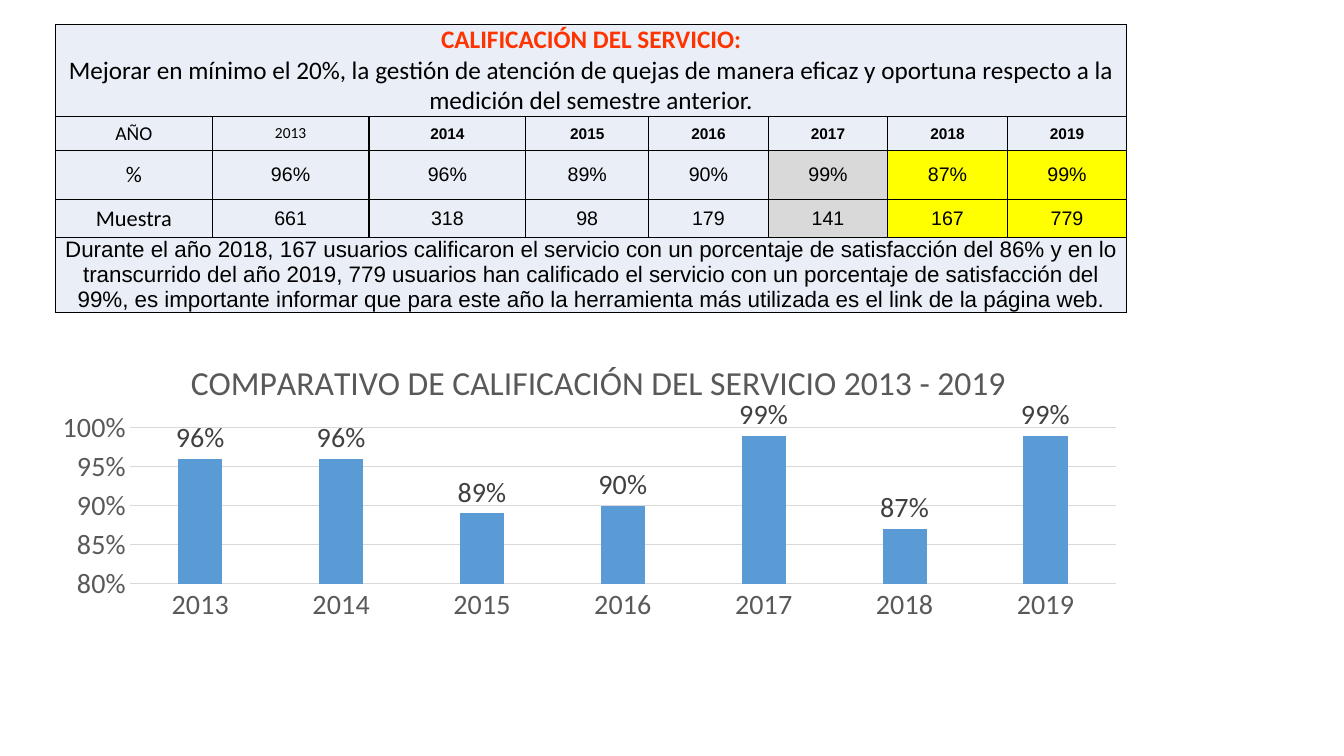
from dataclasses import dataclass

from lxml import etree
from pptx import Presentation
from pptx import util as u
from pptx.chart.data import CategoryChartData
from pptx.dml.color import RGBColor
from pptx.enum import chart as ch, text
from pptx.oxml import parse_xml
from pptx.oxml.ns import nsdecls, qn

BLACK = RGBColor(0x00, 0x00, 0x00)
RED = RGBColor(0xFF, 0x33, 0x00)
PALE_BLUE = RGBColor(0xEA, 0xEF, 0xF7)
GREY = RGBColor(0xD9, 0xD9, 0xD9)
YELLOW = RGBColor(0xFF, 0xFF, 0x00)
BAR_BLUE = RGBColor(0x5B, 0x9B, 0xD5)
AXIS_GREY = RGBColor(0x59, 0x59, 0x59)
LABEL_GREY = RGBColor(0x40, 0x40, 0x40)


@dataclass(frozen=True)
class Style:
    size: float
    name: str = "Calibri"
    bold: bool = False
    color: RGBColor = BLACK


@dataclass(frozen=True)
class Measure:
    heading: str
    values: list[str]
    heading_style: Style
    value_style: Style
    highlighted: bool = True


YEARS = ["2013", "2014", "2015", "2016", "2017", "2018", "2019"]
SCORES = [0.96, 0.96, 0.89, 0.90, 0.99, 0.87, 0.99]
SAMPLES = ["661", "318", "98", "179", "141", "167", "779"]
HIGHLIGHTS = {"2017": GREY, "2018": YELLOW, "2019": YELLOW}
FIRST_YEAR_STYLE = Style(11)

MEASURES = [
    Measure("AÑO", YEARS, Style(14), Style(11, "Arial", True), highlighted=False),
    Measure("%", [f"{score:.0%}" for score in SCORES], Style(16), Style(14, "Arial")),
    Measure("Muestra", SAMPLES, Style(16), Style(14, "Arial")),
]
GOAL = [
    ("CALIFICACIÓN DEL SERVICIO:", Style(18, bold=True, color=RED)),
    ("Mejorar en mínimo el 20%, la gestión de atención de quejas de manera eficaz "
     "y oportuna respecto a la medición del semestre anterior.", Style(18)),
]
SUMMARY = [
    ("Durante el año 2018, 167 usuarios calificaron el servicio con un porcentaje de "
     "satisfacción del 86% y en lo transcurrido del año 2019, 779 usuarios han "
     "calificado el servicio con un porcentaje de satisfacción del 99%, es importante "
     "informar que para este año la herramienta más utilizada es el link de la "
     "página web.", Style(16, "Arial")),
]
COLUMN_WIDTHS = [112, 112, 112, 87.8] + [85.4] * 4
ROW_HEIGHTS = [65.7, 24.5, 34.5, 27.5, 53.5]


def set_font(font, style: Style) -> None:
    font.size = u.Pt(style.size)
    font.name = style.name
    font.bold = style.bold
    font.color.rgb = style.color


def format_cell(cell, fill: RGBColor) -> None:
    """Give a cell its borders, fill and tight margins."""
    properties = cell._tc.get_or_add_tcPr()
    for side in ("lnL", "lnR", "lnT", "lnB"):
        properties.append(parse_xml(
            f'<a:{side} {nsdecls("a")} w="{u.Pt(1)}"><a:solidFill>'
            f'<a:srgbClr val="{BLACK}"/></a:solidFill></a:{side}>'))
    cell.fill.solid()
    cell.fill.fore_color.rgb = fill
    cell.margin_left = cell.margin_right = cell.margin_top = cell.margin_bottom = u.Pt(0)
    cell.vertical_anchor = text.MSO_ANCHOR.MIDDLE


def write_cell(cell, lines: list[tuple[str, Style]]) -> None:
    frame = cell.text_frame
    for index, (line, style) in enumerate(lines):
        paragraph = frame.add_paragraph() if index else frame.paragraphs[0]
        paragraph.text = line
        paragraph.alignment = text.PP_ALIGN.CENTER
        set_font(paragraph.font, style)


def add_ratings_table(slide) -> None:
    table = slide.shapes.add_table(
        len(ROW_HEIGHTS), len(COLUMN_WIDTHS), u.Pt(39.6), u.Pt(17.3),
        u.Pt(sum(COLUMN_WIDTHS)), u.Pt(sum(ROW_HEIGHTS))).table
    table.first_row = table.horz_banding = False
    for column, width in zip(table.columns, COLUMN_WIDTHS):
        column.width = u.Pt(width)
    for row, height in zip(table.rows, ROW_HEIGHTS):
        row.height = u.Pt(height)
    for cell in table.iter_cells():
        format_cell(cell, PALE_BLUE)

    # Full-width goal and summary
    last_row, last_column = len(ROW_HEIGHTS) - 1, len(COLUMN_WIDTHS) - 1
    for row, lines in ((0, GOAL), (last_row, SUMMARY)):
        table.cell(row, 0).merge(table.cell(row, last_column))
        write_cell(table.cell(row, 0), lines)

    # Yearly measures
    for row, measure in enumerate(MEASURES, start=1):
        write_cell(table.cell(row, 0), [(measure.heading, measure.heading_style)])
        for column, (year, value) in enumerate(zip(YEARS, measure.values), start=1):
            cell = table.cell(row, column)
            first_year = row == 1 and column == 1
            write_cell(cell, [(value, FIRST_YEAR_STYLE if first_year else measure.value_style)])
            if measure.highlighted and year in HIGHLIGHTS:
                cell.fill.fore_color.rgb = HIGHLIGHTS[year]


def place(element, **settings: float | str) -> None:
    """Replace the layout of a chart title or plot area with a manual one."""
    for old in element.findall(qn("c:layout")):
        element.remove(old)
    layout = etree.Element(qn("c:layout"))
    manual = etree.SubElement(layout, qn("c:manualLayout"))
    for tag, value in settings.items():
        etree.SubElement(manual, qn(f"c:{tag}")).set("val", str(value))
    rich_text = element.find(qn("c:tx"))
    if rich_text is None:
        element.insert(0, layout)
    else:
        rich_text.addnext(layout)


def add_comparison_chart(slide) -> None:
    data = CategoryChartData(number_format="0%")
    data.categories = YEARS
    data.add_series("Series 1", SCORES)
    chart = slide.shapes.add_chart(
        ch.XL_CHART_TYPE.COLUMN_CLUSTERED, u.Pt(30.2), u.Pt(238.3),
        u.Pt(782.6), u.Pt(210.2), data).chart
    set_font(chart.font, Style(20))
    chart.has_legend = False

    # Title
    chart.has_title = True
    title = chart.chart_title
    heading = title.text_frame.paragraphs[0]
    heading.text = "COMPARATIVO DE CALIFICACIÓN DEL SERVICIO 2013 - 2019"
    set_font(heading.font, Style(24, color=AXIS_GREY))
    title.include_in_layout = False
    place(title._element, xMode="edge", yMode="edge", x=0.13, y=0.07)

    # Axes
    years, scores = chart.category_axis, chart.value_axis
    for axis in (years, scores):
        axis.major_tick_mark = axis.minor_tick_mark = ch.XL_TICK_MARK.NONE
        set_font(axis.tick_labels.font, Style(20, color=AXIS_GREY))
    scores.minimum_scale, scores.maximum_scale, scores.major_unit = 0.8, 1, 0.05
    scores.tick_labels.number_format = "0%"
    scores.tick_labels.number_format_is_linked = False
    scores.format.line.fill.background()
    for line in (years.format.line, scores.major_gridlines.format.line):
        line.color.rgb = GREY
        line.width = u.Pt(0.75)

    # Bars and their labels
    plot = chart.plots[0]
    plot.gap_width, plot.overlap, plot.vary_by_categories = 219, -27, False
    bars = plot.series[0]
    bars.format.fill.solid()
    bars.format.fill.fore_color.rgb = BAR_BLUE
    labels = bars.data_labels
    labels.show_value = True
    labels.position = ch.XL_LABEL_POSITION.OUTSIDE_END
    set_font(labels.font, Style(20, color=LABEL_GREY))
    plot_area = chart._chartSpace.find(f".//{qn('c:plotArea')}")
    place(plot_area, layoutTarget="inner", xMode="edge", yMode="edge",
          x=0.08, y=0.32, w=0.9, h=0.53)


def main() -> None:
    deck = Presentation()
    deck.slide_width, deck.slide_height = u.Pt(960), u.Pt(540)
    slide = deck.slides.add_slide(deck.slide_layouts[6])
    add_ratings_table(slide)
    add_comparison_chart(slide)
    deck.save("out.pptx")


if __name__ == "__main__":
    main()
